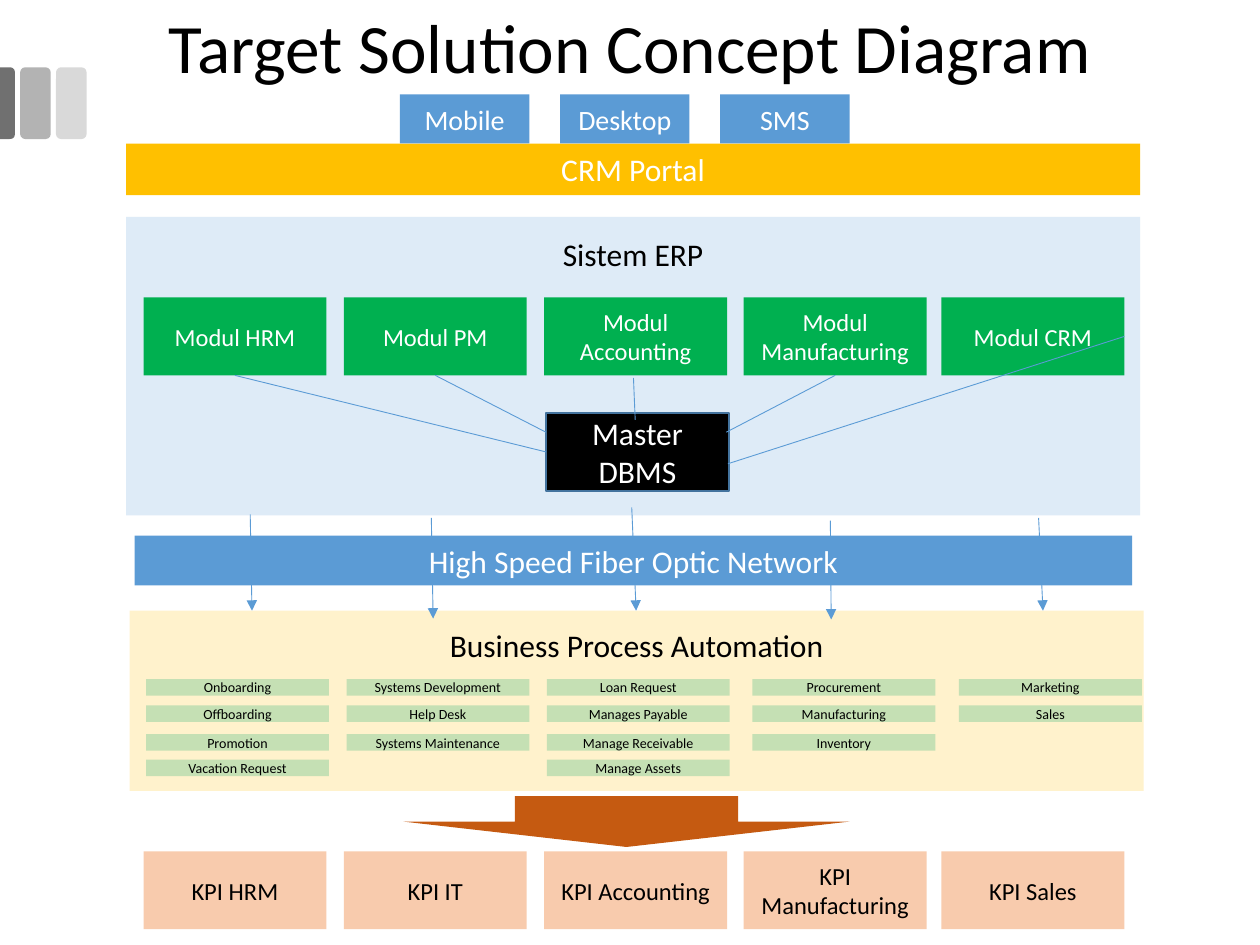
from lxml.etree import SubElement
from pptx import Presentation
from pptx.dml.color import RGBColor
from pptx.enum.shapes import MSO_CONNECTOR, MSO_SHAPE as Preset
from pptx.enum.text import MSO_ANCHOR as Anchor, PP_ALIGN as Align
from pptx.oxml.ns import qn
from pptx.util import Pt

BLACK, WHITE = RGBColor(0, 0, 0), RGBColor(255, 255, 255)
BLUE, NAVY = RGBColor(0x5B, 0x9B, 0xD5), RGBColor(0x43, 0x73, 0x9E)
PALE_BLUE = RGBColor(0xDE, 0xEB, 0xF7)
GOLD, CREAM = RGBColor(0xFF, 0xC0, 0x00), RGBColor(0xFF, 0xF2, 0xCC)
GREEN, PALE_GREEN = RGBColor(0x00, 0xB0, 0x50), RGBColor(0xC5, 0xE0, 0xB4)
RUST, PEACH = RGBColor(0xC5, 0x5A, 0x11), RGBColor(0xF8, 0xCB, 0xAD)
LIGHT_GREY, MID_GREY = RGBColor(0xD9, 0xD9, 0xD9), RGBColor(0xB3, 0xB3, 0xB3)
DARK_GREY = RGBColor(0x70, 0x70, 0x70)

TITLE = "Target Solution Concept Diagram"
CHANNELS = ["Mobile", "Desktop", "SMS"]
MODULES = ["Modul HRM", "Modul PM", "Modul Accounting", "Modul Manufacturing", "Modul CRM"]
KPIS = ["KPI HRM", "KPI IT", "KPI Accounting", "KPI Manufacturing", "KPI Sales"]
PROCESSES = [
    ["Onboarding", "Offboarding", "Promotion", "Vacation Request"],
    ["Systems Development", "Help Desk", "Systems Maintenance"],
    ["Loan Request", "Manages Payable", "Manage Receivable", "Manage Assets"],
    ["Procurement", "Manufacturing", "Inventory"],
    ["Marketing", "Sales"],
]
COLUMNS = [82, 196.5, 311, 425, 538]
PROCESS_COLUMNS = [83.5, 198, 312.5, 430, 548]
PROCESS_ROWS = [388, 403, 419.5, 434]
CARD_WIDTH, CARD_HEIGHT = 104.5, 44.5
MODULE_LINKS = [
    ((134, 214.5), (312, 258.5)),
    ((248, 214.5), (312, 247)),
    ((362, 216), (363, 240)),
    ((477, 214.5), (415, 247)),
    ((642, 191.5), (416, 265)),
]
MODULE_SIDES = [2, 2, None, 2, 3]
FLOWS = [
    ((143, 294), (144, 349)),
    ((246.5, 296), (247.5, 353.5)),
    ((361, 290), (363.5, 349)),
    ((474.5, 297.5), (475, 354)),
    ((593.5, 296), (596, 349)),
]


def style_text(box, text, size, color):
    frame = box.text_frame
    frame.word_wrap = True
    frame.vertical_anchor = Anchor.MIDDLE
    frame.text = text
    para = frame.paragraphs[0]
    para.alignment = Align.CENTER
    font = para.runs[0].font
    font.name, font.size = "Calibri", Pt(size)
    font.color.rgb = color


def add_box(page, place, fill, text="", size=18, color=WHITE, preset=Preset.RECTANGLE):
    box = page.shapes.add_shape(preset, *map(Pt, place))
    box.shadow.inherit = False
    box.fill.solid()
    box.fill.fore_color.rgb = fill
    box.line.fill.background()
    if text:
        style_text(box, text, size, color)
    return box


def add_panel(page, place, fill, heading, inset):
    frame = add_box(page, place, fill, heading, color=BLACK).text_frame
    frame.vertical_anchor = Anchor.TOP
    frame.margin_top = Pt(inset)


def add_line(page, start, end, arrow=False):
    line = page.shapes.add_connector(MSO_CONNECTOR.STRAIGHT, *map(Pt, start + end))
    line.line.color.rgb = BLUE
    line.line.width = Pt(0.5)
    if arrow:
        SubElement(line.line._get_or_add_ln(), qn("a:tailEnd"), type="triangle")
    SubElement(line._element.spPr, qn("a:effectLst"))
    return line


def add_cards(page, names, top, fill, color):
    return [add_box(page, (left, top, CARD_WIDTH, CARD_HEIGHT), fill, name, 14, color)
            for left, name in zip(COLUMNS, names)]


def build():
    deck = Presentation()
    deck.slide_width, deck.slide_height = Pt(720), Pt(540)
    page = deck.slides.add_slide(deck.slide_layouts[6])

    for left, fill in ((32, LIGHT_GREY), (11.5, MID_GREY)):
        add_box(page, (left, 38.5, 17.5, 41), fill, preset=Preset.ROUNDED_RECTANGLE)
    tab = add_box(page, (-16.5, 54.5, 41, 9), DARK_GREY, preset=Preset.ROUND_2_SAME_RECTANGLE)
    tab.adjustments[0] = 0.29
    tab.rotation = 90

    title = page.shapes.add_textbox(Pt(49.5), Pt(7), Pt(621), Pt(44))
    style_text(title, TITLE, 39.6, BLACK)
    title.text_frame.paragraphs[0].line_spacing = 0.9

    add_box(page, (72, 82, 579.5, 29.5), GOLD, "CRM Portal")
    for index, name in enumerate(CHANNELS):
        add_box(page, (228.5 + 91.5 * index, 54, 74, 28), BLUE, name, 16)

    add_panel(page, (72, 124, 579.5, 170.5), PALE_BLUE, "Sistem ERP", 10.5)
    modules = add_cards(page, MODULES, 170, GREEN, WHITE)

    add_panel(page, (74, 349, 579.5, 103), CREAM, "Business Process Automation", 9)
    for left, names in zip(PROCESS_COLUMNS, PROCESSES):
        for top, name in zip(PROCESS_ROWS, names):
            add_box(page, (left, top, CARD_WIDTH, 9.5), PALE_GREEN, name, 8, BLACK)

    database = add_box(page, (312, 236, CARD_WIDTH, CARD_HEIGHT), BLACK, "Master DBMS")
    database.line.color.rgb = NAVY
    database.line.width = Pt(1)

    links = [add_line(page, start, end) for start, end in MODULE_LINKS]
    for link, module, side in zip(links, modules, MODULE_SIDES):
        if side is not None:
            link.begin_connect(module, side)
    links[0].end_connect(database, 1)

    for start, end in FLOWS:
        add_line(page, start, end, arrow=True)
    add_box(page, (77, 306, 570, 28.5), BLUE, "High Speed Fiber Optic Network")

    add_cards(page, KPIS, 486.5, PEACH, BLACK)
    add_box(page, (230.5, 455, 255, 29), RUST, preset=Preset.DOWN_ARROW)
    deck.save("out.pptx")


if __name__ == "__main__":
    build()
